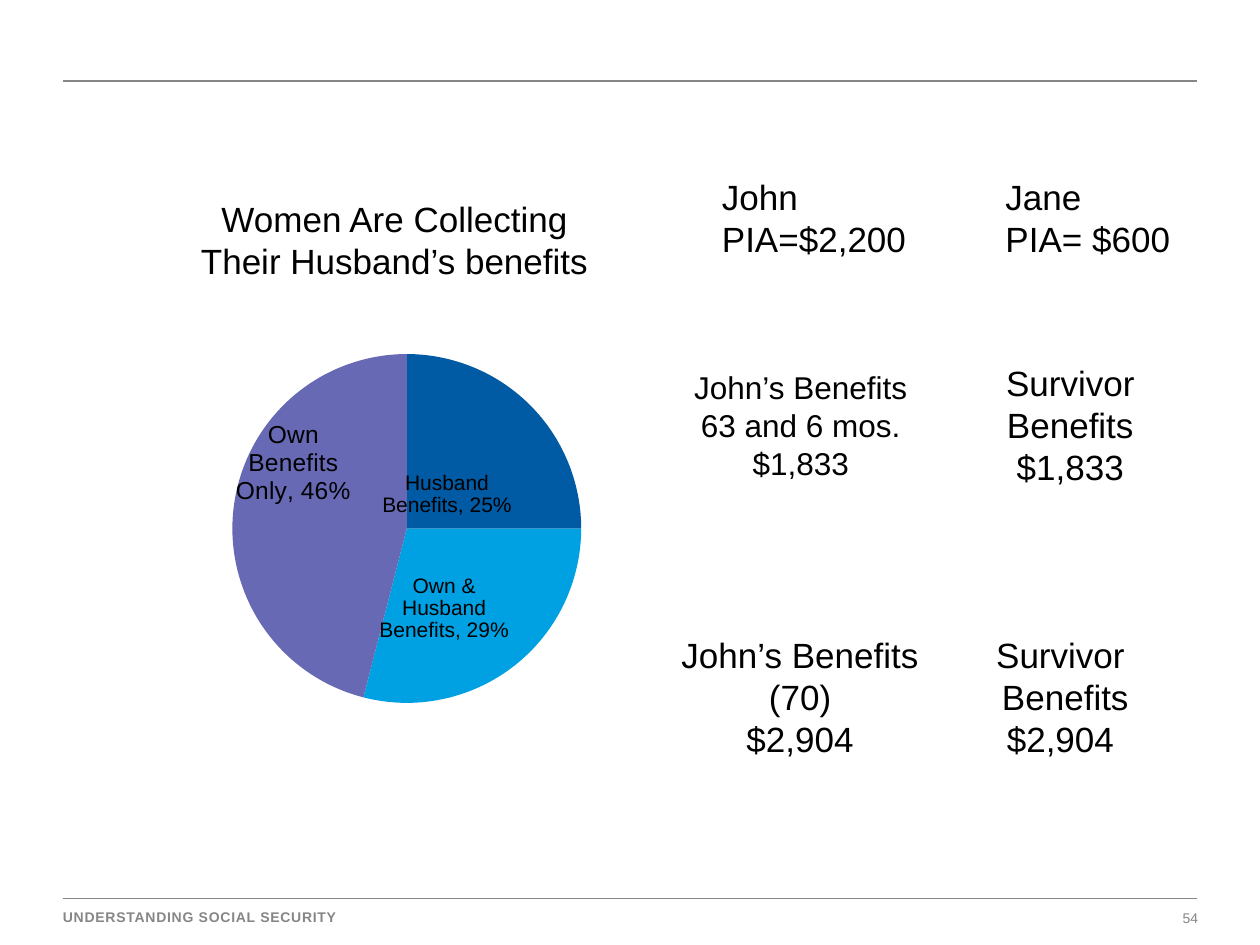
from dataclasses import dataclass

from lxml.etree import SubElement
from pptx import Presentation
from pptx.chart.data import CategoryChartData
from pptx.dml.color import RGBColor
from pptx.enum.chart import XL_CHART_TYPE, XL_LABEL_POSITION
from pptx.enum.shapes import MSO_CONNECTOR
from pptx.enum.text import MSO_AUTO_SIZE, PP_ALIGN
from pptx.oxml import parse_xml
from pptx.oxml.ns import nsdecls, qn
from pptx.util import Inches, Pt

FONT = "Arial"
BLACK = "000000"
GRAY = "868686"
LEFT, CENTER, RIGHT = PP_ALIGN.LEFT, PP_ALIGN.CENTER, PP_ALIGN.RIGHT
CHART_NS = "http://schemas.microsoft.com/office/drawing/2012/chart"
LABEL_ID = "{CE6537A1-D6FC-4f65-9D91-7224C49458BB}"


@dataclass
class Note:
    x: float
    y: float
    width: float
    height: float
    lines: list[str]
    align: PP_ALIGN = CENTER
    size: int = 20
    color: str = BLACK
    bold: bool = False
    track: int = 0


@dataclass
class Slice:
    name: str
    share: float
    color: str
    label: str
    size: int
    dx: float
    dy: float
    height: float


NOTES = [
    Note(9.37, 7.22, 0.14, 0.13, ["54"], RIGHT, 8, GRAY),
    Note(0.5, 7.21, 3.1, 0.15, ["UNDERSTANDING SOCIAL SECURITY"], LEFT, 8, GRAY, True, 40),
    Note(1.58, 1.57, 3.18, 0.67, ["Women Are Collecting ", "Their Husband’s benefits "]),
    Note(5.73, 1.39, 1.47, 0.67, ["John", "PIA=$2,200"], LEFT),
    Note(7.98, 1.39, 1.32, 0.67, ["Jane", "PIA= $600"], LEFT),
    Note(5.5, 2.92, 1.71, 0.91, ["John’s Benefits", "63 and 6 mos.", "$1,833"], size=18),
    Note(7.98, 2.87, 1.03, 1.01, ["Survivor", "Benefits", "$1,833"]),
    Note(5.4, 5.03, 1.9, 1.01, ["John’s Benefits", "(70)", "$2,904"]),
    Note(7.9, 5.03, 1.11, 1.01, ["Survivor ", "Benefits", "$2,904 "]),
]

SLICES = [
    Slice("Husband's Benefits", 0.25, "005AA4",
          "Husband Benefits, 25%", 12, -0.04, 0.05, 0.14),
    Slice("Own and Husband's Benefits", 0.29, "00A1E2",
          "Own & Husband Benefits, 29%", 12, -0.03, 0.02, 0.18),
    Slice("Own Benefits Only", 0.46, "6769B5",
          "Own Benefits Only, 46%", 14, -0.05, -0.1, 0.21),
]


def paint(target, color: str) -> None:
    target.rgb = RGBColor.from_string(color)


def style(font, size: int, color: str, bold: bool = False) -> None:
    font.name, font.size, font.bold = FONT, Pt(size), bold
    paint(font.color, color)


def add_rule(slide, y: float, weight: float) -> None:
    rule = slide.shapes.add_connector(
        MSO_CONNECTOR.STRAIGHT, Inches(0.5), Inches(y), Inches(9.5), Inches(y))
    rule.line.width = Pt(weight)
    paint(rule.line.color, GRAY)
    SubElement(rule._element.spPr, qn("a:effectLst"))


def add_note(slide, note: Note) -> None:
    box = slide.shapes.add_textbox(
        Inches(note.x), Inches(note.y), Inches(note.width), Inches(note.height))
    frame = box.text_frame
    frame.margin_left = frame.margin_right = frame.margin_top = frame.margin_bottom = 0
    frame.word_wrap = False
    frame.auto_size = MSO_AUTO_SIZE.NONE if note.track else MSO_AUTO_SIZE.SHAPE_TO_FIT_TEXT
    frame.text = "\n".join(note.lines)
    for line in frame.paragraphs:
        line.alignment = note.align
        style(line.font, note.size, note.color, note.bold)
        if note.track:
            line.runs[0]._r.get_or_add_rPr().set("spc", str(note.track))


def place(**parts: float | str) -> str:
    items = "".join(f'<c:{key} val="{val}"/>' for key, val in parts.items())
    return f'<c:manualLayout {nsdecls("c")}>{items}</c:manualLayout>'


def layout(**parts: float | str):
    return parse_xml(f'<c:layout {nsdecls("c")}>{place(**parts)}</c:layout>')


def extent(width: float, height: float):
    return parse_xml(
        f'<c:extLst {nsdecls("c")}><c:ext uri="{LABEL_ID}" xmlns:c15="{CHART_NS}">'
        f'<c15:layout>{place(w=width, h=height)}</c15:layout></c:ext></c:extLst>')


def add_label(point, part: Slice) -> None:
    label = point.data_label
    label.text_frame.text = part.label
    style(label.text_frame.paragraphs[0].font, part.size, BLACK)
    label.position = XL_LABEL_POSITION.CENTER
    node = label._dLbl
    node.insert(1, layout(x=part.dx, y=part.dy))
    node.find(qn("c:showCatName")).set("val", "1")
    node.append(extent(0.19, part.height))


def add_pie(slide) -> None:
    data = CategoryChartData(number_format="0%")
    data.categories = [part.name for part in SLICES]
    data.add_series("Series 1", [part.share for part in SLICES])
    chart = slide.shapes.add_chart(
        XL_CHART_TYPE.PIE, Inches(0.95), Inches(2.16), Inches(4.26), Inches(4.33), data).chart
    chart.has_title = chart.has_legend = False
    style(chart.font, 10, BLACK)
    area = chart._chartSpace.chart.plotArea
    for old in area.findall(qn("c:layout")):
        area.remove(old)
    area.insert(0, layout(layoutTarget="inner", xMode="edge", yMode="edge",
                          x=0.21, y=0.15, w=0.65, h=0.64))
    plot = chart.plots[0]
    plot.vary_by_categories = True
    series = plot.series[0]
    labels = series.data_labels
    labels.show_value = labels.show_category_name = True
    labels.show_percentage = False
    labels.number_format, labels.number_format_is_linked = "0%", False
    for spot, part in enumerate(SLICES):
        point = series.points[spot]
        point.format.fill.solid()
        paint(point.format.fill.fore_color, part.color)
        point.format.line.fill.background()
        add_label(point, part)


def main() -> None:
    deck = Presentation()
    deck.slide_width, deck.slide_height = Inches(10), Inches(7.5)
    slide = deck.slides.add_slide(deck.slide_layouts[6])
    for y, weight in ((0.64, 1.25), (7.13, 1)):
        add_rule(slide, y, weight)
    add_pie(slide)
    for note in NOTES:
        add_note(slide, note)
    deck.save("out.pptx")


if __name__ == "__main__":
    main()
